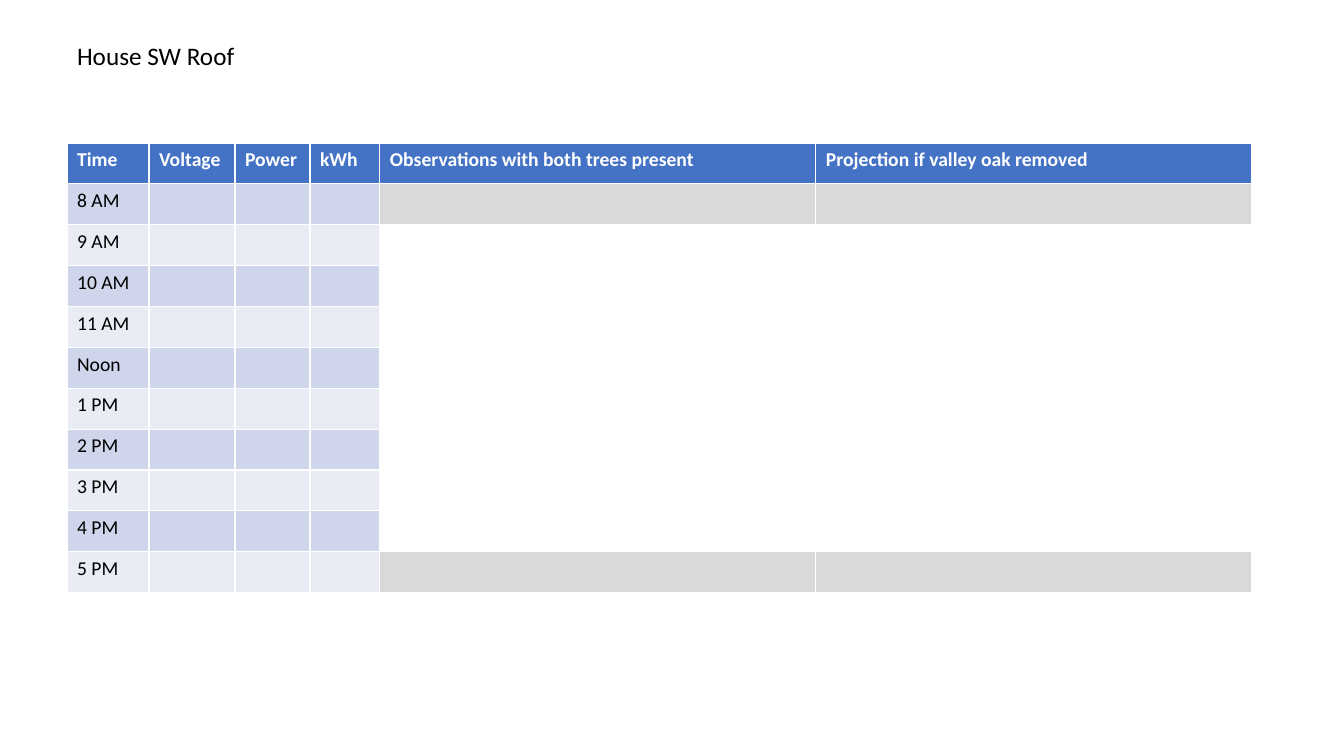
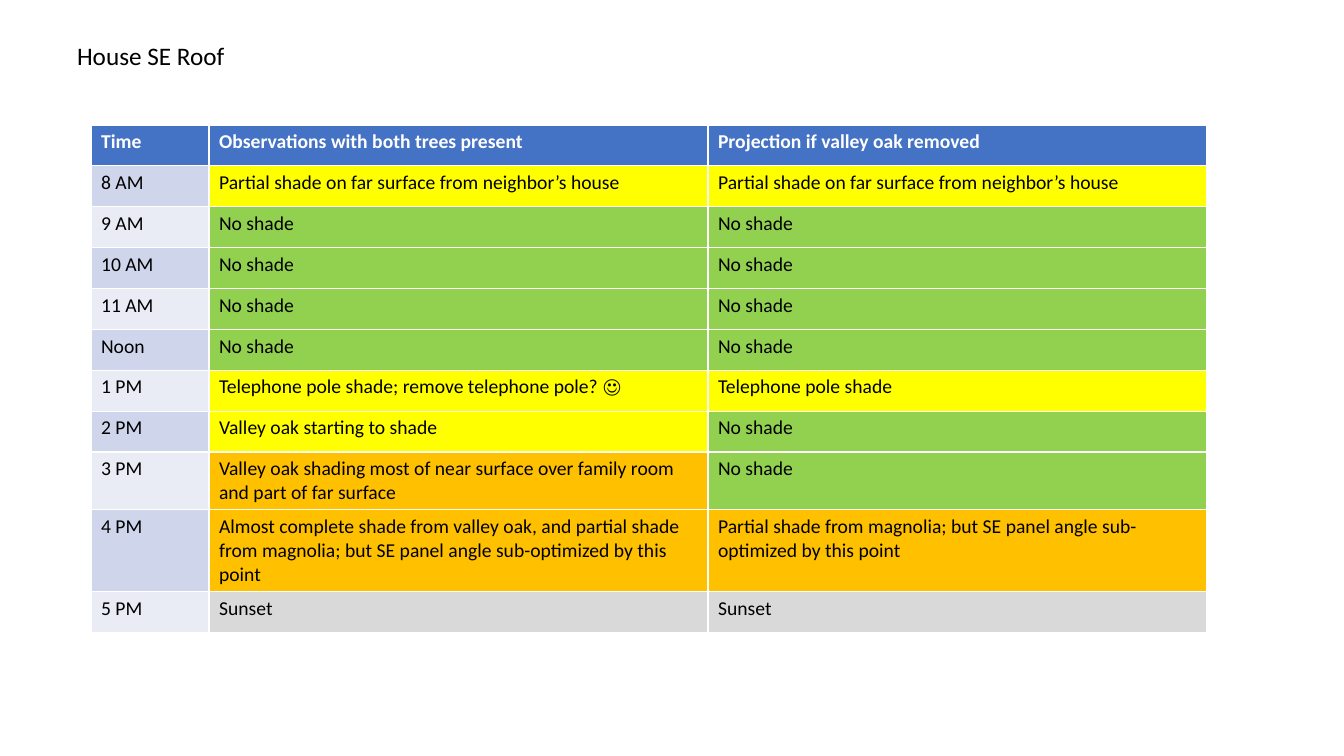
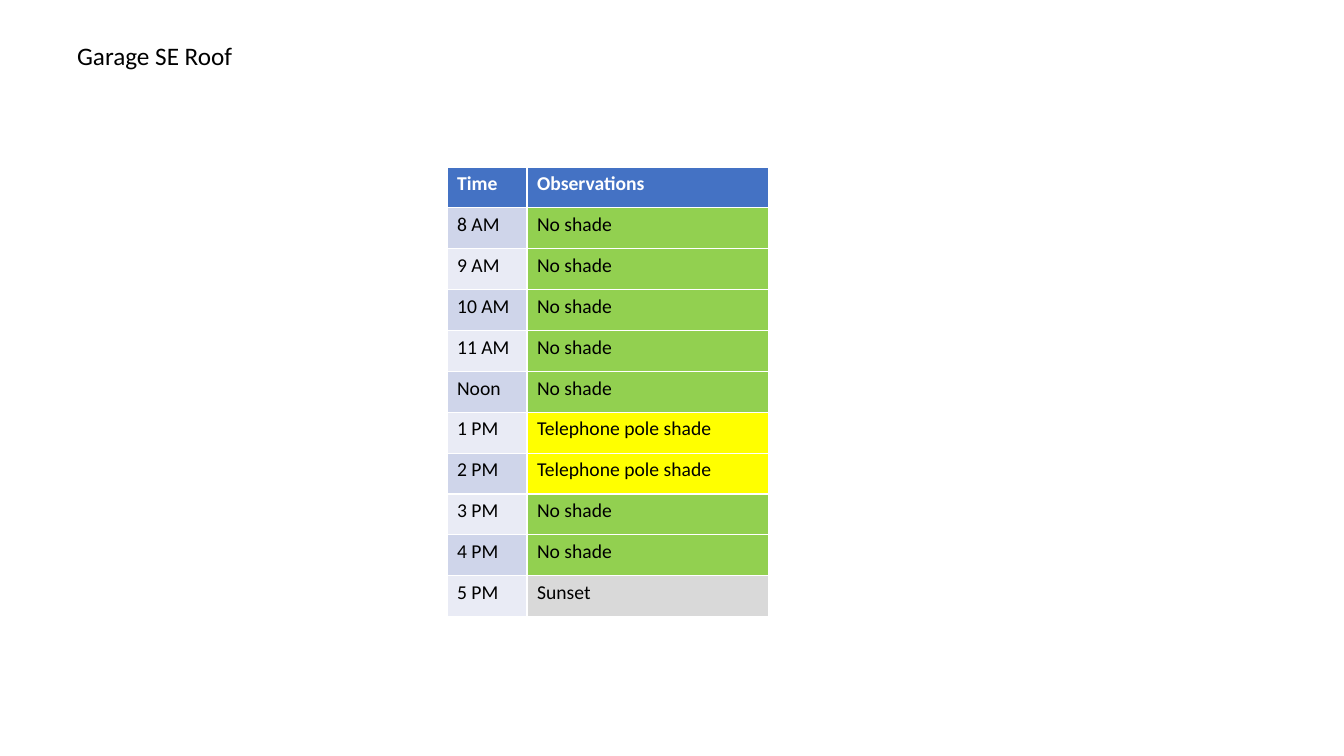
from pptx import Presentation
from pptx.dml.color import RGBColor
from pptx.enum.text import MSO_ANCHOR, MSO_AUTO_SIZE, PP_ALIGN
from pptx.util import Pt

PX = 914400 / 100.8
TOP = MSO_ANCHOR.TOP
FIT_SHAPE = MSO_AUTO_SIZE.SHAPE_TO_FIT_TEXT
LEFT = PP_ALIGN.LEFT
FONT = "Calibri"
TITLE_ONLY = 5
TABLE_HEIGHT = 450

COLORS = {
    "text": "000000",
    "white": "FFFFFF",
    "header": "4472C4",
    "dark band": "CFD5EA",
    "light band": "E9EBF5",
    "green": "92D050",
    "yellow": "FFFF00",
    "orange": "FFC000",
    "gray": "D9D9D9",
}

TIMES = ["8 AM", "9 AM", "10 AM", "11 AM", "Noon", "1 PM", "2 PM", "3 PM", "4 PM", "5 PM"]
BOTH_TREES = "Observations with both trees present"
OAK_REMOVED = "Projection if valley oak removed"

DARK = ("", "gray")
OPEN = ("", "white")
NO_SHADE = ("No shade", "green")
NEIGHBOR = ("Partial shade on far surface from neighbor’s house", "yellow")
POLE = ("Telephone pole shade", "yellow")
SUNSET = ("Sunset", "gray")

ROOFS = [
    {
        "title": "House SW Roof",
        "position": (67, 143),
        "columns": [("Time", 82), ("Voltage", 86), ("Power", 75), ("kWh", 70),
                    (BOTH_TREES, 436), (OAK_REMOVED, 436)],
        "observations": [[DARK] * 2] + [[OPEN] * 2] * 8 + [[DARK] * 2],
    },
    {
        "title": "House SE Roof",
        "position": (91, 125),
        "columns": [("Time", 118), (BOTH_TREES, 499), (OAK_REMOVED, 499)],
        "observations": [
            [NEIGHBOR] * 2,
            *[[NO_SHADE] * 2] * 4,
            [("Telephone pole shade; remove telephone pole? ☺", "yellow"), POLE],
            [("Valley oak starting to shade", "yellow"), NO_SHADE],
            [("Valley oak shading most of near surface over family room "
              "and part of far surface", "orange"), NO_SHADE],
            [("Almost complete shade from valley oak, and partial shade from magnolia; "
              "but SE panel angle sub-optimized by this point", "orange"),
             ("Partial shade from magnolia; but SE panel angle sub-optimized "
              "by this point", "orange")],
            [SUNSET] * 2,
        ],
    },
    {
        "title": "Garage SE Roof",
        "position": (447, 167),
        "columns": [("Time", 80), ("Observations", 242)],
        "observations": [[NO_SHADE]] * 5 + [[POLE]] * 2 + [[NO_SHADE]] * 2 + [[SUNSET]],
    },
]


def px(length):
    return round(length * PX)


def write_text(text_frame, text, size=14, color="text", bold=False):
    paragraph = text_frame.paragraphs[0]
    paragraph.alignment = LEFT
    run = paragraph.add_run()
    run.text = text
    run.font.name = FONT
    run.font.size = Pt(size)
    run.font.bold = bold
    run.font.color.rgb = RGBColor.from_string(COLORS[color])


presentation = Presentation()
presentation.slide_width = px(1344)
presentation.slide_height = px(756)
layout = presentation.slide_layouts[TITLE_ONLY]

layout_title = layout.placeholders[0]
layout_title.left, layout_title.top = px(67), px(35)
layout_title.width, layout_title.height = px(484), px(40)
layout_title.text_frame.vertical_anchor = TOP
layout_title.text_frame.auto_size = FIT_SHAPE

for roof in ROOFS:
    slide = presentation.slides.add_slide(layout)
    write_text(slide.shapes.title.text_frame, roof["title"], size=18)

    columns = roof["columns"]
    rows = [[(heading, "header") for heading, width in columns]]
    for index, (time, observations) in enumerate(zip(TIMES, roof["observations"])):
        band = "light band" if index % 2 else "dark band"
        readings = len(columns) - 1 - len(observations)
        rows.append([(time, band)] + [("", band)] * readings + observations)

    left, top = roof["position"]
    table_width = sum(width for heading, width in columns)
    table = slide.shapes.add_table(
        len(rows), len(columns), px(left), px(top), px(table_width), px(TABLE_HEIGHT)
    ).table
    for column, (heading, width) in zip(table.columns, columns):
        column.width = px(width)

    for row_index, row in enumerate(rows):
        is_header = row_index == 0
        for column_index, (text, fill) in enumerate(row):
            cell = table.cell(row_index, column_index)
            cell.fill.solid()
            cell.fill.fore_color.rgb = RGBColor.from_string(COLORS[fill])
            if text:
                write_text(cell.text_frame, text, bold=is_header,
                           color="white" if is_header else "text")

presentation.save("out.pptx")
